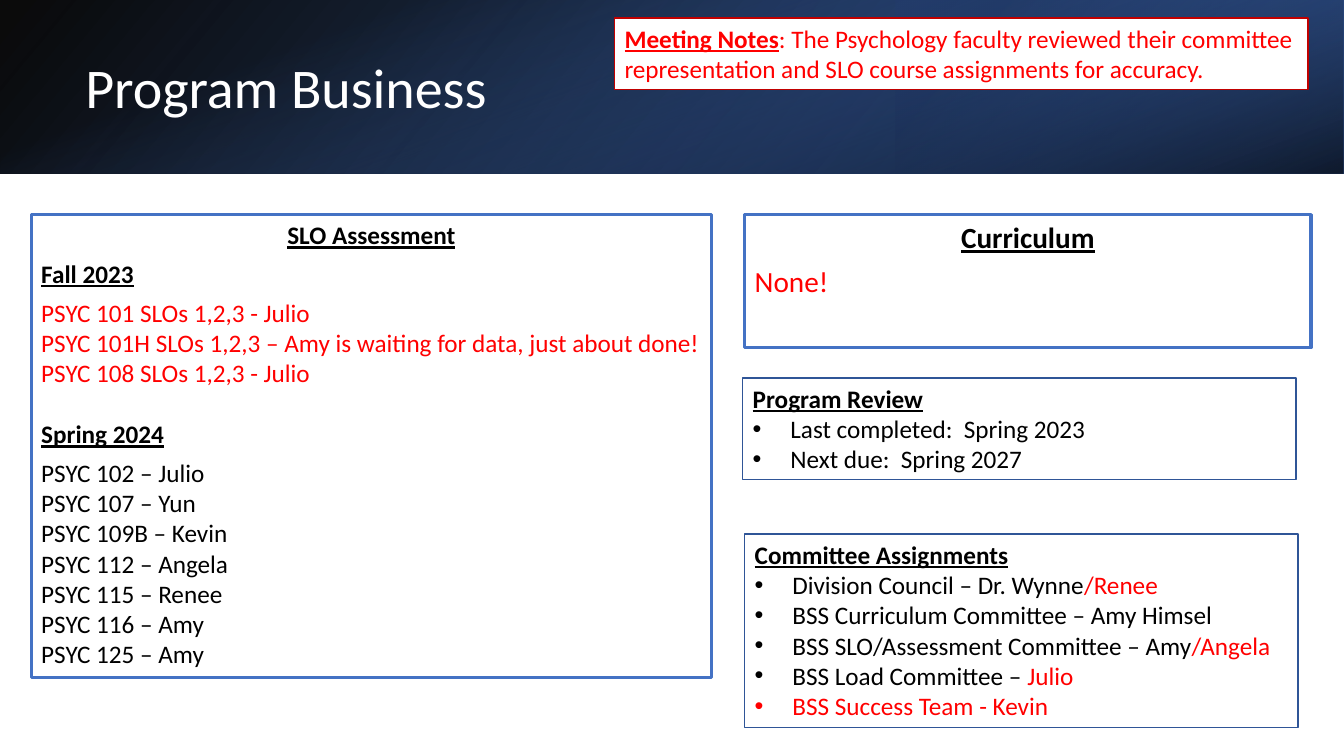
from dataclasses import dataclass

from pptx import Presentation
from pptx.dml.color import RGBColor
from pptx.enum.shapes import MSO_SHAPE
from pptx.enum.text import MSO_ANCHOR, PP_ALIGN
from pptx.oxml import parse_xml
from pptx.oxml.ns import nsdecls, qn
from pptx.util import Cm, Pt

RECT = MSO_SHAPE.RECTANGLE
TOP, MIDDLE = MSO_ANCHOR.TOP, MSO_ANCHOR.MIDDLE
LEFT, CENTER = PP_ALIGN.LEFT, PP_ALIGN.CENTER


@dataclass(frozen=True)
class Theme:
    """Colours and type sizes of the slide."""
    font: str = "Calibri"
    title: float = 40
    large: float = 20.9
    body: float = 18
    gap: float = 6
    black: str = "000000"
    white: str = "FFFFFF"
    red: str = "FF0000"
    dark_red: str = "C00000"
    blue: str = "4472C4"
    mid_blue: str = "2F5597"
    navy: str = "203864"


THEME = Theme()


def write(p, text, size=THEME.body, color=THEME.black, heading=False):
    """Add a run of text with its format to a paragraph."""
    r = p.add_run()
    r.text = text
    font = r.font
    font.name, font.size = THEME.font, Pt(size)
    font.bold = font.underline = heading
    font.color.rgb = RGBColor.from_string(color)


class Builder:
    """Draws the elements of one slide in one style."""

    def __init__(self, slide, theme):
        """Keep the slide and its theme."""
        self.s, self.theme = slide, theme

    def rect(self, left, top, width, height):
        """Add a plain rectangle without shadow, fill or line."""
        sp = self.s.shapes.add_shape(RECT, Cm(left), Cm(top), Cm(width), Cm(height))
        sp.shadow.inherit = False
        sp.fill.background()
        sp.line.fill.background()
        return sp

    def gradient(self, box, stops, angle, rotation=0, flip=False):
        """Add a rectangle with a translucent linear gradient."""
        sp = self.rect(*box)
        sp.rotation = rotation
        spPr = sp.element.spPr
        if flip:
            spPr.find(qn("a:xfrm")).set("flipH", "1")
        marks = "".join(
            f'<a:gs pos="{pos * 1000}"><a:srgbClr val="{color}">'
            f'<a:alpha val="{alpha * 1000}"/></a:srgbClr></a:gs>'
            for pos, color, alpha in stops)
        spPr.replace(spPr.find(qn("a:noFill")), parse_xml(
            f'<a:gradFill {nsdecls("a")} rotWithShape="1"><a:gsLst>{marks}</a:gsLst>'
            f'<a:lin ang="{angle * 60000}" scaled="0"/></a:gradFill>'))

    def title(self, box, text):
        """Add the slide title."""
        left, top, width, height = map(Cm, box)
        tf = self.s.shapes.add_textbox(left, top, width, height).text_frame
        tf.word_wrap, tf.vertical_anchor = True, MIDDLE
        p = tf.paragraphs[0]
        p.line_spacing = 0.9
        write(p, text, size=self.theme.title, color=self.theme.white)

    def panel(self, box, line, weight, fill=None):
        """Add an outlined text panel and return its text frame."""
        sp = self.rect(*box)
        if fill:
            sp.fill.solid()
            sp.fill.fore_color.rgb = RGBColor.from_string(fill)
        sp.line.color.rgb = RGBColor.from_string(line)
        sp.line.width = Pt(weight)
        tf = sp.text_frame
        tf.word_wrap, tf.vertical_anchor = True, TOP
        return tf

    def paragraph(self, tf, align=LEFT, before=0, after=0):
        """Return the next paragraph, using the empty first one if free."""
        p = tf.paragraphs[0]
        if p.runs:
            p = tf.add_paragraph()
        p.alignment = align
        p.space_before, p.space_after = Pt(before), Pt(after)
        return p

    def line(self, tf, text, align=LEFT, before=0, after=0, **fmt):
        """Add a paragraph holding a single run."""
        write(self.paragraph(tf, align, before, after), text, **fmt)

    def bullet(self, tf, *runs):
        """Add a bulleted paragraph of (text, colour) runs."""
        p = self.paragraph(tf)
        pPr = p._p.get_or_add_pPr()
        pPr.set("marL", str(Cm(0.95)))
        pPr.set("indent", str(Cm(-0.95)))
        pPr.append(parse_xml(f'<a:buFont {nsdecls("a")} typeface="Arial"/>'))
        pPr.append(parse_xml(f'<a:buChar {nsdecls("a")} char="•"/>'))
        for text, color in runs:
            write(p, text, color=color)


def main():
    """Build and save the slide."""
    t = THEME
    prs = Presentation()
    prs.slide_width, prs.slide_height = Cm(33.87), Cm(19.05)
    b = Builder(prs.slides.add_slide(prs.slide_layouts[6]), t)

    b.gradient((0, 0, 33.87, 4.37), [(0, t.black, 96), (100, t.mid_blue, 100)], 140, flip=True)
    b.gradient((22.58, 0, 11.28, 4.37), [(19, t.navy, 68), (100, t.blue, 79)], 320,
               rotation=180, flip=True)
    b.gradient((14.75, -14.75, 4.37, 33.87), [(23, t.blue, 0), (99, t.black, 74)], 340, rotation=90)
    b.title((1.9, 1.07, 18.77, 2.44), "Program Business")

    slo = b.panel((0.79, 5.41, 17.14, 11.66), t.blue, 2.25)
    b.line(slo, "SLO Assessment", align=CENTER, after=t.gap, heading=True)
    b.line(slo, "Fall 2023", after=t.gap, heading=True)
    for text in ("PSYC 101 SLOs 1,2,3 - Julio",
                 "PSYC 101H SLOs 1,2,3 – Amy is waiting for data, just about done!",
                 "PSYC 108 SLOs 1,2,3 - Julio"):
        b.line(slo, text, color=t.red)
    b.line(slo, "Spring 2024", before=22, after=t.gap, heading=True)
    for course, teacher in (("102", "Julio"), ("107", "Yun"), ("109B", "Kevin"), ("112", "Angela"),
                            ("115", "Renee"), ("116", "Amy"), ("125", "Amy")):
        b.line(slo, f"PSYC {course} – {teacher}")

    curriculum = b.panel((18.77, 5.41, 14.27, 3.35), t.blue, 2.25)
    b.line(curriculum, "Curriculum", align=CENTER, after=t.gap, size=t.large, heading=True)
    b.line(curriculum, "None!", after=t.gap, size=t.large, color=t.red)

    review = b.panel((18.72, 9.53, 13.94, 2.56), t.mid_blue, 1)
    b.line(review, "Program Review", heading=True)
    for text in ("Last completed:  Spring 2023", "Next due:  Spring 2027"):
        b.bullet(review, (text, t.black))

    committees = b.panel((18.77, 13.46, 13.94, 4.88), t.mid_blue, 1)
    b.line(committees, "Committee Assignments", heading=True)
    for runs in ([("Division Council – Dr. Wynne", t.black), ("/Renee", t.red)],
                 [("BSS Curriculum Committee – Amy Himsel", t.black)],
                 [("BSS SLO/Assessment Committee – Amy", t.black), ("/Angela", t.red)],
                 [("BSS Load Committee – ", t.black), ("Julio", t.red)],
                 [("BSS Success Team - Kevin", t.red)]):
        b.bullet(committees, *runs)

    notes = b.panel((15.49, 0.46, 17.48, 1.8), t.dark_red, 1.25, fill=t.white)
    p = b.paragraph(notes)
    write(p, "Meeting Notes", color=t.red, heading=True)
    write(p, ": The Psychology faculty reviewed their committee representation "
             "and SLO course assignments for accuracy.", color=t.red)

    prs.save("out.pptx")


if __name__ == "__main__":
    main()
